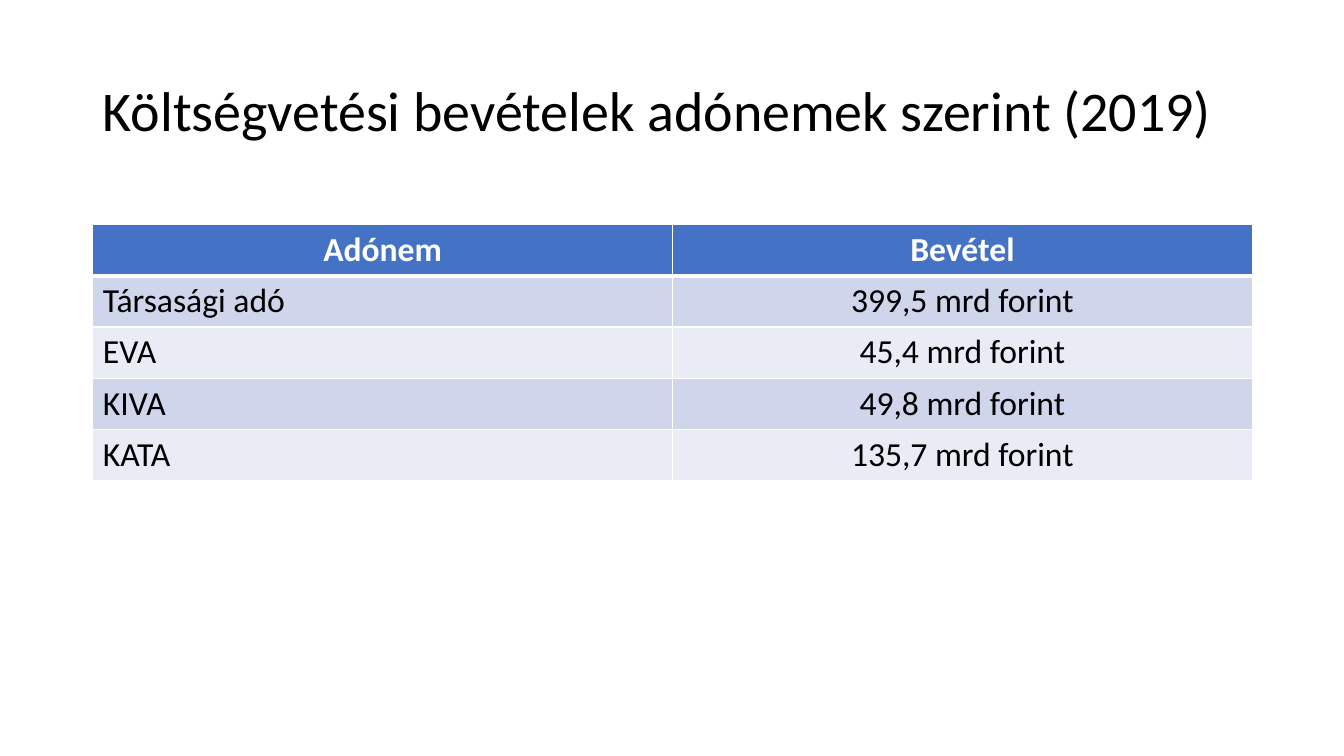
from lxml import etree
from pptx import Presentation
from pptx import util as u
from pptx.dml.color import RGBColor
from pptx.enum import text
from pptx.oxml import ns

FONT = "Calibri"
WHITE, BLACK = "FFFFFF", "000000"
HEADER_FILL, BANDS = "4472C4", ("CFD5EA", "E9EBF5")
WIDTH, HEIGHT = u.Inches(13.33), u.Inches(7.5)
LEFT, CONTENT_WIDTH = u.Inches(0.92), u.Inches(11.5)
ROW_HEIGHT = u.Inches(0.5)
REVENUES = [
    ("Adónem", "Bevétel"),
    ("Társasági adó", "399,5 mrd forint"),
    ("EVA", "45,4 mrd forint"),
    ("KIVA", "49,8 mrd forint"),
    ("KATA", "135,7 mrd forint"),
]


def rgb(value):
    return RGBColor.from_string(value)


def format_text(p, size, color, bold=False, align=text.PP_ALIGN.LEFT):
    p.alignment = align
    for r in p.runs:
        r.font.name, r.font.size, r.font.bold = FONT, u.Pt(size), bold
        r.font.color.rgb = rgb(color)


def add_title(s, wording):
    title = s.shapes.title
    title.left, title.top = LEFT, u.Inches(0.4)
    title.width, title.height = CONTENT_WIDTH, u.Inches(1.45)
    tf = title.text_frame
    tf.text = wording
    tf.word_wrap = True
    tf.auto_size = text.MSO_AUTO_SIZE.NONE
    tf.vertical_anchor = text.MSO_ANCHOR.MIDDLE
    p = tf.paragraphs[0]
    p.line_spacing = 0.9
    format_text(p, 40, BLACK)


def set_borders(cell, **points):
    """Draw white cell borders; keys are the sides L, R, T and B, in that order."""
    tc_pr = cell._tc.get_or_add_tcPr()
    for side, width in points.items():
        line = etree.SubElement(tc_pr, ns.qn(f"a:ln{side}"), w=str(u.Pt(width)))
        fill = etree.SubElement(line, ns.qn("a:solidFill"))
        etree.SubElement(fill, ns.qn("a:srgbClr"), val=WHITE)


def add_revenue_table(s, rows):
    columns = len(rows[0])
    table = s.shapes.add_table(len(rows), columns, LEFT, u.Inches(2.23),
                               CONTENT_WIDTH, ROW_HEIGHT * len(rows)).table
    for i, row in enumerate(rows):
        header = i == 0
        for j, wording in enumerate(row):
            cell = table.cell(i, j)
            cell.text = wording
            centred = header or j > 0
            format_text(cell.text_frame.paragraphs[0], 24,
                        WHITE if header else BLACK, header,
                        text.PP_ALIGN.CENTER if centred else text.PP_ALIGN.LEFT)
            set_borders(cell, L=1, R=1, T=3 if i == 1 else 1, B=3 if header else 1)
            cell.fill.solid()
            cell.fill.fore_color.rgb = rgb(HEADER_FILL if header else BANDS[(i - 1) % 2])


def main():
    prs = Presentation()
    prs.slide_width, prs.slide_height = WIDTH, HEIGHT
    s = prs.slides.add_slide(prs.slide_layouts.get_by_name("Title Only"))
    add_title(s, "Költségvetési bevételek adónemek szerint (2019)")
    add_revenue_table(s, REVENUES)
    prs.save("out.pptx")


if __name__ == "__main__":
    main()
